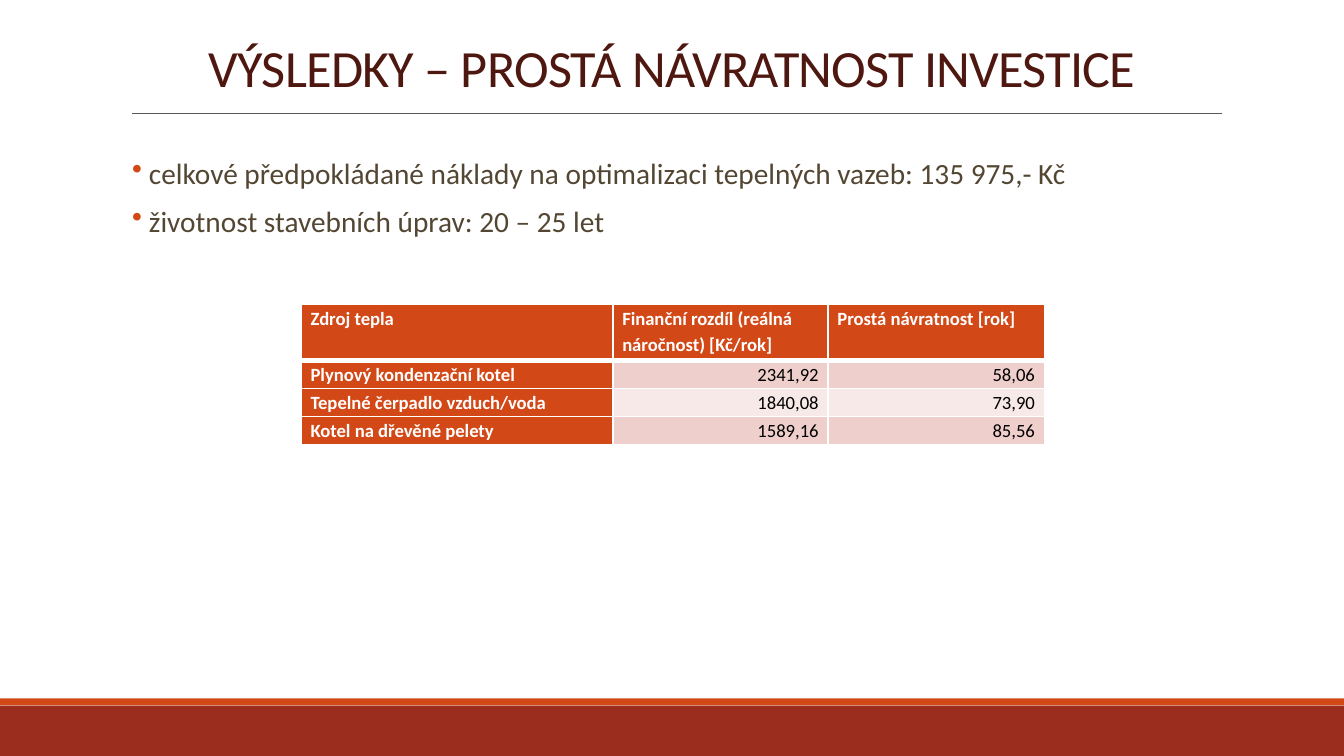
import dataclasses

import lxml.etree
import pptx
import pptx.dml.color
import pptx.enum.shapes
import pptx.enum.text
import pptx.oxml.ns
import pptx.util

Pt = pptx.util.Pt
qn = pptx.oxml.ns.qn
Align = pptx.enum.text.PP_ALIGN
Anchor = pptx.enum.text.MSO_ANCHOR


@dataclasses.dataclass(frozen=True)
class Theme:
    font: str = "Calibri"
    title_size: float = 28
    body_size: float = 15.7
    table_size: float = 10
    title: str = "4E1710"
    body: str = "534733"
    rule: str = "595959"
    accent: str = "D34817"
    footer: str = "9B2D1F"
    white: str = "FFFFFF"
    black: str = "000000"
    bands: tuple = ("EFCFCC", "F7E9E8")


THEME = Theme()
PAGE_WIDTH, PAGE_HEIGHT = 720, 405
LEFT, CONTENT_WIDTH = 70.8, 583.7

BULLETS = [
    "celkové předpokládané náklady na optimalizaci tepelných vazeb: 135 975,- Kč",
    "životnost stavebních úprav: 20 – 25 let",
]
TABLE_ROWS = [
    ("Zdroj tepla", "Finanční rozdíl (reálná náročnost) [Kč/rok]", "Prostá návratnost [rok]"),
    ("Plynový kondenzační kotel", "2341,92", "58,06"),
    ("Tepelné čerpadlo vzduch/voda", "1840,08", "73,90"),
    ("Kotel na dřevěné pelety", "1589,16", "85,56"),
]
COLUMN_WIDTHS = (167, 115.3, 115.9)
ROW_HEIGHTS = (30.2, 15, 15, 15)


def color(code):
    return pptx.dml.color.RGBColor.from_string(code)


def style_text(paragraph, size, code, bold=False):
    for span in paragraph.runs:
        span.font.name = THEME.font
        span.font.size = Pt(size)
        span.font.bold = bold
        span.font.color.rgb = color(code)


def add_bar(page, top, height, code):
    bar = page.shapes.add_shape(
        pptx.enum.shapes.MSO_SHAPE.RECTANGLE, 0, Pt(top), Pt(PAGE_WIDTH), Pt(height))
    bar.shadow.inherit = False
    bar.fill.solid()
    bar.fill.fore_color.rgb = color(code)
    bar.line.fill.background()


def add_title(page, text):
    box = page.shapes.add_textbox(0, Pt(21.6), Pt(PAGE_WIDTH), Pt(33.8))
    frame = box.text_frame
    frame.text = text
    frame.word_wrap = True
    frame.vertical_anchor = Anchor.MIDDLE
    paragraph = frame.paragraphs[0]
    paragraph.alignment = Align.CENTER
    paragraph.line_spacing = 0.85
    style_text(paragraph, THEME.title_size, THEME.title)
    # Slightly tightened letter spacing, in hundredths of a point
    paragraph.runs[0].font._element.set("spc", "-40")


def add_rule(page, top):
    rule = page.shapes.add_connector(
        pptx.enum.shapes.MSO_CONNECTOR.STRAIGHT,
        Pt(LEFT), Pt(top), Pt(LEFT + CONTENT_WIDTH), Pt(top))
    rule.line.color.rgb = color(THEME.rule)
    rule.line.width = Pt(0.5)
    lxml.etree.SubElement(rule._element.spPr, qn("a:effectLst"))


def add_bullet(paragraph, indent):
    properties = paragraph._p.get_or_add_pPr()
    properties.set("marL", str(Pt(indent)))
    properties.set("indent", str(Pt(-indent)))
    tint = lxml.etree.SubElement(properties, qn("a:buClr"))
    lxml.etree.SubElement(tint, qn("a:srgbClr"), val=THEME.accent)
    lxml.etree.SubElement(properties, qn("a:buChar"), char="•")


def add_bullet_list(page, items):
    box = page.shapes.add_textbox(Pt(LEFT), Pt(83.5), Pt(CONTENT_WIDTH), Pt(272))
    frame = box.text_frame
    frame.text = "\n".join(items)
    frame.word_wrap = True
    frame.margin_left = frame.margin_right = 0
    for index, paragraph in enumerate(frame.paragraphs):
        add_bullet(paragraph, 9)
        paragraph.line_spacing = 0.8
        paragraph.space_before = Pt(9 if index else 0)
        paragraph.space_after = Pt(1.5)
        style_text(paragraph, THEME.body_size, THEME.body)


def add_cell_borders(cell, widths):
    properties = cell._tc.get_or_add_tcPr()
    for index, (side, width) in enumerate(widths.items()):
        line = lxml.etree.Element(qn(f"a:ln{side}"), w=str(Pt(width)))
        fill = lxml.etree.SubElement(line, qn("a:solidFill"))
        lxml.etree.SubElement(fill, qn("a:srgbClr"), val=THEME.white)
        properties.insert(index, line)


def fill_cell(cell, text, row, column):
    heading = row == 0 or column == 0
    cell.text_frame.text = text
    cell.margin_left = cell.margin_right = Pt(5.1)
    cell.margin_top = cell.margin_bottom = 0
    paragraph = cell.text_frame.paragraphs[0]
    paragraph.line_spacing = 1.15
    paragraph.alignment = Align.LEFT if heading else Align.RIGHT
    style_text(paragraph, THEME.table_size, THEME.white if heading else THEME.black, heading)
    cell.fill.solid()
    cell.fill.fore_color.rgb = color(THEME.accent if heading else THEME.bands[(row - 1) % 2])
    # A thicker line separates the header from the data
    add_cell_borders(cell, {"L": 1, "R": 1, "T": 3 if row == 1 else 1, "B": 3 if row == 0 else 1})


def add_results_table(page):
    table = page.shapes.add_table(
        len(TABLE_ROWS), len(COLUMN_WIDTHS), Pt(161.3), Pt(162.9),
        Pt(sum(COLUMN_WIDTHS)), Pt(sum(ROW_HEIGHTS))).table
    for column, width in zip(table.columns, COLUMN_WIDTHS):
        column.width = Pt(width)
    for row, height in zip(table.rows, ROW_HEIGHTS):
        row.height = Pt(height)
    for row, texts in enumerate(TABLE_ROWS):
        for column, text in enumerate(texts):
            fill_cell(table.cell(row, column), text, row, column)


def main():
    deck = pptx.Presentation()
    deck.slide_width, deck.slide_height = Pt(PAGE_WIDTH), Pt(PAGE_HEIGHT)
    page = deck.slides.add_slide(deck.slide_layouts[6])

    # Footer bands
    add_bar(page, 378, 27, THEME.footer)
    add_bar(page, 374.2, 3.8, THEME.accent)

    # Heading and key facts
    add_bullet_list(page, BULLETS)
    add_title(page, "VÝSLEDKY – PROSTÁ NÁVRATNOST INVESTICE")
    add_rule(page, 60.6)

    # Payback by heat source
    add_results_table(page)

    deck.save("out.pptx")


if __name__ == "__main__":
    main()
